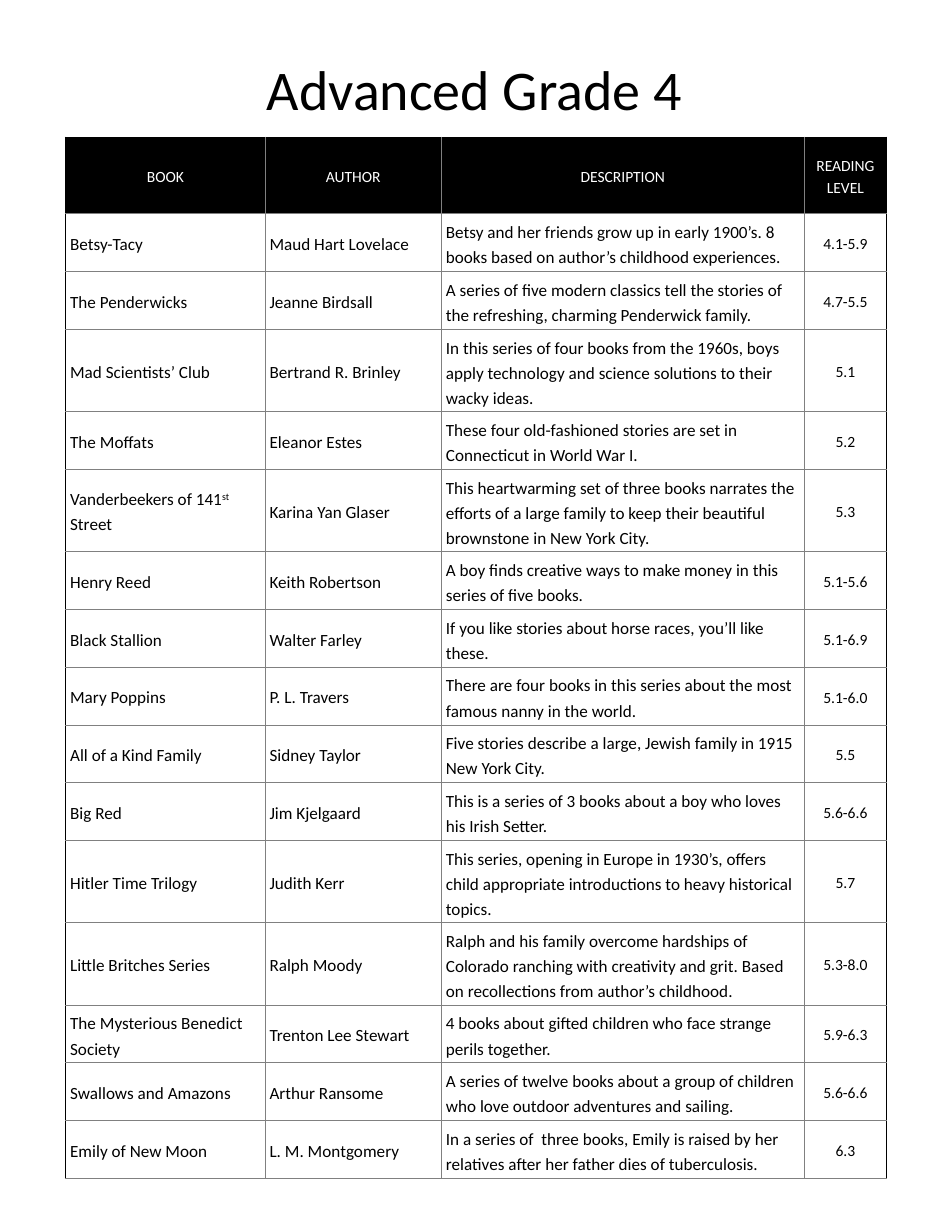
from dataclasses import astuple, dataclass

from lxml import etree
from pptx import Presentation
from pptx.dml.color import RGBColor
from pptx.enum.text import MSO_ANCHOR, MSO_AUTO_SIZE, PP_ALIGN
from pptx.oxml.ns import qn
from pptx.slide import Slide
from pptx.table import _Cell
from pptx.util import Pt

MIDDLE, TOP = MSO_ANCHOR.MIDDLE, MSO_ANCHOR.TOP
CENTER, LEFT = PP_ALIGN.CENTER, PP_ALIGN.LEFT
GROW = MSO_AUTO_SIZE.SHAPE_TO_FIT_TEXT

FONT = "Calibri"
COLORS = {"ink": "000000", "header_text": "FFFFFF", "grid": "808080"}
COLUMN_WIDTHS = (128.2, 113.4, 233.2, 53)
HEADER_HEIGHT, BOOK_HEIGHT = 49, 35.3
CELL_MARGIN = 2.88
TITLE_ONLY = 5
SUPERSCRIPT_MARK = "|"


@dataclass
class Book:
    title: str
    author: str
    description: str
    level: str


HEADER = Book("BOOK", "AUTHOR", "DESCRIPTION", "READING LEVEL")
BOOKS = [
    Book("Betsy-Tacy", "Maud Hart Lovelace",
         "Betsy and her friends grow up in early 1900’s. 8 books based on author’s childhood experiences.", "4.1-5.9"),
    Book("The Penderwicks", "Jeanne Birdsall",
         "A series of five modern classics tell the stories of the refreshing, charming Penderwick family.", "4.7-5.5"),
    Book("Mad Scientists’ Club", "Bertrand R. Brinley",
         "In this series of four books from the 1960s, boys apply technology and science solutions "
         "to their wacky ideas.", "5.1"),
    Book("The Moffats", "Eleanor Estes",
         "These four old-fashioned stories are set in Connecticut in World War I.", "5.2"),
    Book("Vanderbeekers of 141|st| Street", "Karina Yan Glaser",
         "This heartwarming set of three books narrates the efforts of a large family to keep "
         "their beautiful brownstone in New York City.", "5.3"),
    Book("Henry Reed", "Keith Robertson",
         "A boy finds creative ways to make money in this series of five books.", "5.1-5.6"),
    Book("Black Stallion", "Walter Farley",
         "If you like stories about horse races, you’ll like these.", "5.1-6.9"),
    Book("Mary Poppins", "P. L. Travers",
         "There are four books in this series about the most famous nanny in the world.", "5.1-6.0"),
    Book("All of a Kind Family", "Sidney Taylor",
         "Five stories describe a large, Jewish family in 1915 New York City.", "5.5"),
    Book("Big Red", "Jim Kjelgaard",
         "This is a series of 3 books about a boy who loves his Irish Setter.", "5.6-6.6"),
    Book("Hitler Time Trilogy", "Judith Kerr",
         "This series, opening in Europe in 1930’s, offers child appropriate introductions "
         "to heavy historical topics.", "5.7"),
    Book("Little Britches Series", "Ralph Moody",
         "Ralph and his family overcome hardships of Colorado ranching with creativity and grit. "
         "Based on recollections from author’s childhood.", "5.3-8.0"),
    Book("The Mysterious Benedict Society", "Trenton Lee Stewart",
         "4 books about gifted children who face strange perils together.", "5.9-6.3"),
    Book("Swallows and Amazons", "Arthur Ransome",
         "A series of twelve books about a group of children who love outdoor adventures and sailing.", "5.6-6.6"),
    Book("Emily of New Moon", "L. M. Montgomery",
         "In a series of  three books, Emily is raised by her relatives after her father dies of tuberculosis.",
         "6.3"),
]


def rgb(color: str) -> RGBColor:
    return RGBColor.from_string(COLORS[color])


def draw_border(cell: _Cell, side: str, outer: bool) -> None:
    color, width = ("ink", 1) if outer else ("grid", 0.5)
    line = etree.SubElement(cell._tc.get_or_add_tcPr(), qn(f"a:ln{side}"), w=str(Pt(width)))
    fill = etree.SubElement(line, qn("a:solidFill"))
    etree.SubElement(fill, qn("a:srgbClr"), val=COLORS[color])


def write_cell(cell: _Cell, text: str, size: float, color: str, align: PP_ALIGN) -> None:
    cell.vertical_anchor = MIDDLE
    cell.margin_left = cell.margin_right = cell.margin_top = cell.margin_bottom = Pt(CELL_MARGIN)
    paragraph = cell.text_frame.paragraphs[0]
    paragraph.alignment = align
    paragraph.line_spacing = 1.19
    paragraph.space_after = Pt(6)
    paragraph.font.name = FONT
    paragraph.font.size = Pt(size)
    paragraph.font.color.rgb = rgb(color)
    for index, part in enumerate(text.split(SUPERSCRIPT_MARK)):
        run = paragraph.add_run()
        run.text = part
        if index % 2:
            run._r.get_or_add_rPr().set("baseline", "30000")


def draw_title(slide: Slide, text: str) -> None:
    title = slide.shapes.title
    title.left, title.top, title.width, title.height = Pt(105), Pt(31.7), Pt(400), Pt(51)
    frame = title.text_frame
    frame.text = text
    frame.word_wrap = True
    frame.auto_size = GROW
    frame.vertical_anchor = TOP
    paragraph = frame.paragraphs[0]
    paragraph.alignment = CENTER
    paragraph.font.name = FONT
    paragraph.font.size = Pt(36)
    paragraph.font.color.rgb = rgb("ink")


def draw_book_table(slide: Slide, books: list[Book]) -> None:
    rows = [HEADER, *books]
    last_column = len(COLUMN_WIDTHS) - 1
    height = HEADER_HEIGHT + BOOK_HEIGHT * len(books)
    table = slide.shapes.add_table(len(rows), len(COLUMN_WIDTHS), Pt(42.2), Pt(88.3),
                                   Pt(sum(COLUMN_WIDTHS)), Pt(height)).table
    table.first_row = table.horz_banding = False
    for column, width in zip(table.columns, COLUMN_WIDTHS):
        column.width = Pt(width)
    for r, book in enumerate(rows):
        is_header = r == 0
        table.rows[r].height = Pt(HEADER_HEIGHT if is_header else BOOK_HEIGHT)
        for c, text in enumerate(astuple(book)):
            cell = table.cell(r, c)
            small = is_header or c == last_column
            write_cell(cell, text, 10 if small else 11,
                       "header_text" if is_header else "ink", CENTER if small else LEFT)
            for side, outer in (("L", c == 0), ("R", c == last_column), ("T", is_header), ("B", False)):
                draw_border(cell, side, outer)
            if is_header:
                cell.fill.solid()
                cell.fill.fore_color.rgb = rgb("ink")
            else:
                cell.fill.background()


def main() -> None:
    presentation = Presentation()
    presentation.slide_width, presentation.slide_height = Pt(612), Pt(792)
    slide = presentation.slides.add_slide(presentation.slide_layouts[TITLE_ONLY])
    draw_book_table(slide, BOOKS)
    draw_title(slide, "Advanced Grade 4")
    presentation.save("out.pptx")


if __name__ == "__main__":
    main()
